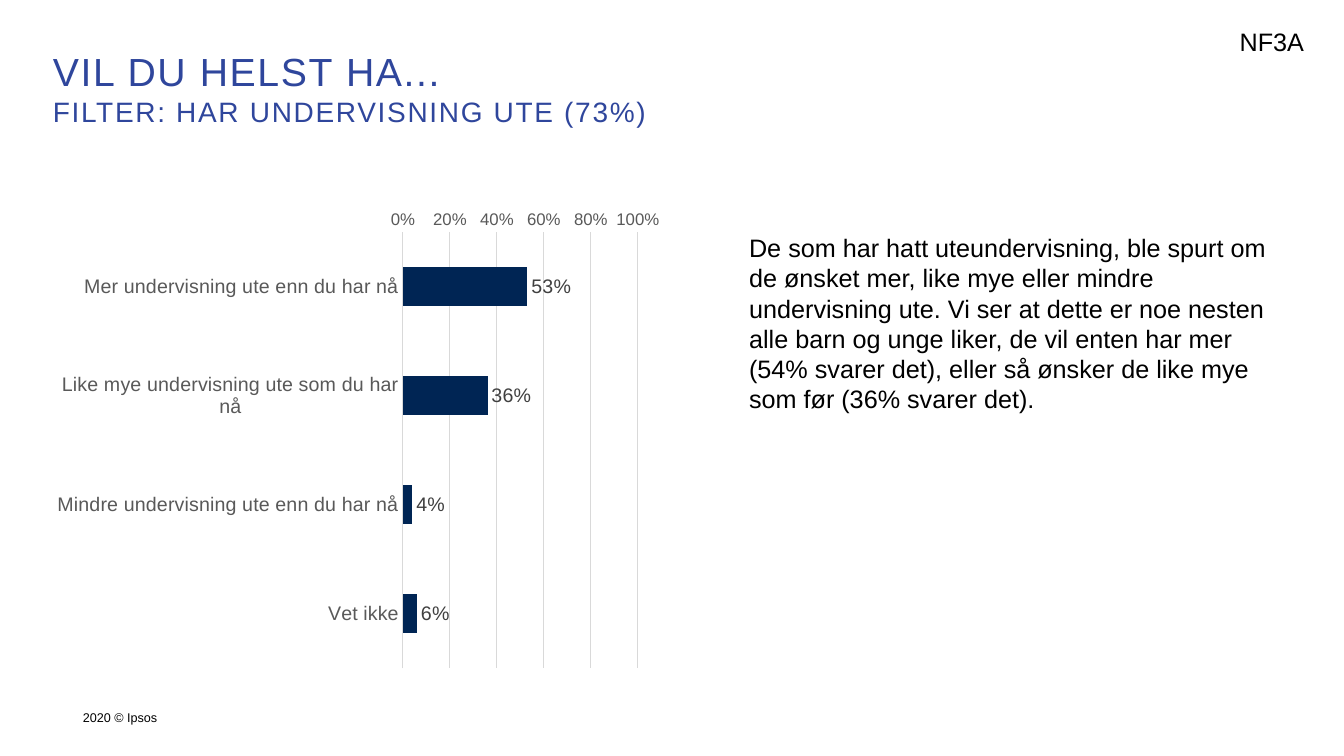
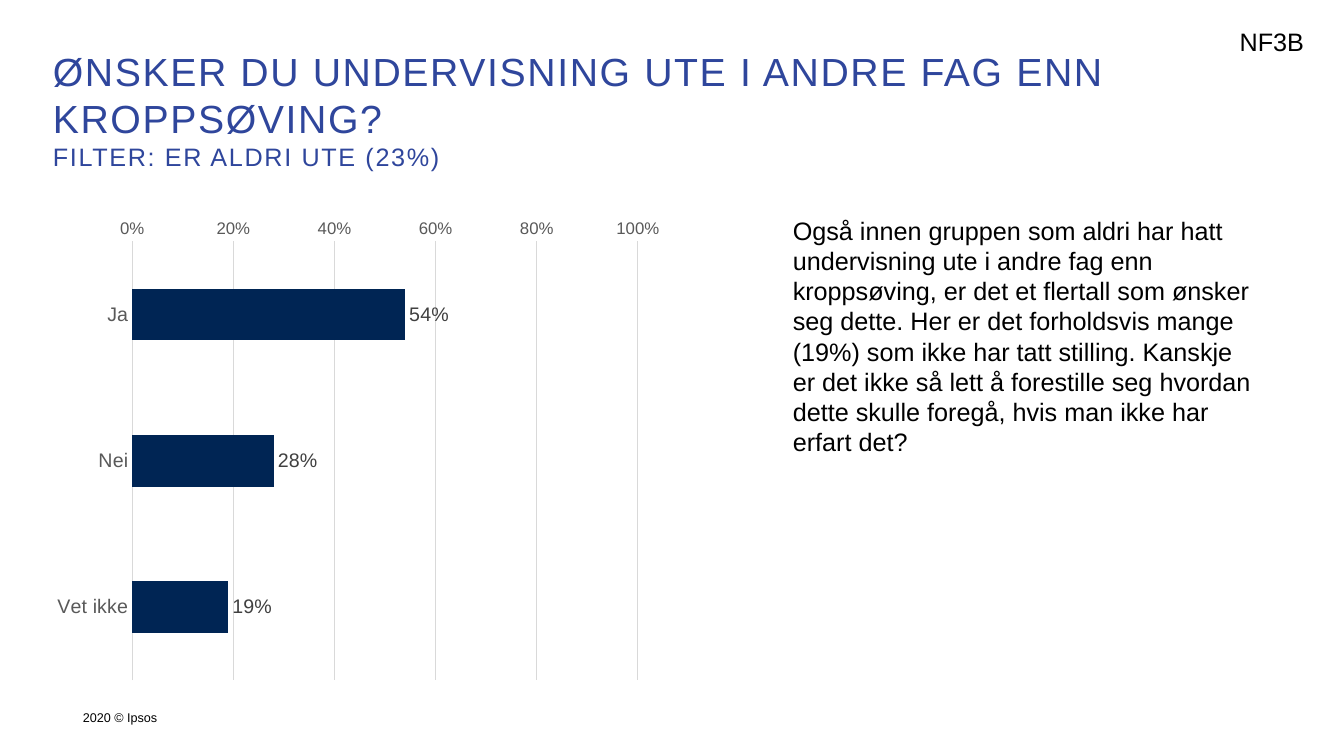
from lxml import etree
from pptx import Presentation
from pptx.chart.data import CategoryChartData
from pptx.dml.color import RGBColor
from pptx.enum.chart import XL_CHART_TYPE, XL_LABEL_POSITION, XL_TICK_MARK
from pptx.enum.text import MSO_ANCHOR, MSO_AUTO_SIZE, PP_ALIGN
from pptx.util import Inches, Pt

BAR = XL_CHART_TYPE.BAR_CLUSTERED
OUTSIDE_END = XL_LABEL_POSITION.OUTSIDE_END
NO_TICK = XL_TICK_MARK.NONE
TOP, MIDDLE = MSO_ANCHOR.TOP, MSO_ANCHOR.MIDDLE
GROW = MSO_AUTO_SIZE.SHAPE_TO_FIT_TEXT
NO_FIT = MSO_AUTO_SIZE.NONE
LEFT = PP_ALIGN.LEFT

FONT = "Arial"
COLORS = {
    "title": "2F469C",
    "text": "000000",
    "bar": "002554",
    "axis": "595959",
    "label": "404040",
    "grid": "D9D9D9",
}

# Grid: boxes are (column, row, columns wide, rows high)
SLIDE_WIDTH, SLIDE_HEIGHT = Inches(13.333), Inches(7.5)
COLUMNS, ROWS = 120, 90
FOOTER_BOX = (7.4, 83, 103, 4.8)
CODE_BOX = (109.8, 2.6, 7.9, 4.8)

SLIDES = [
    {
        "code": "NF3A",
        "title": "VIL DU HELST HA...",
        "filter": "FILTER: HAR UNDERVISNING UTE (73%)",
        "filter_size": 20,
        "title_box": (4, 5, 112, 10),
        "chart_box": (4, 23.9, 56, 56.8),
        "answers": {
            "Mer undervisning ute enn du har nå": 0.53,
            "Like mye undervisning ute som du har nå": 0.36,
            "Mindre undervisning ute enn du har nå": 0.04,
            "Vet ikke": 0.06,
        },
        "comment_box": (66, 27.1, 48.7, 23),
        "comment": "De som har hatt uteundervisning, ble spurt om de ønsket mer, "
                   "like mye eller mindre undervisning ute. Vi ser at dette er noe "
                   "nesten alle barn og unge liker, de vil enten har mer (54% svarer "
                   "det), eller så ønsker de like mye som før (36% svarer det).",
    },
    {
        "code": "NF3B",
        "title": "ØNSKER DU UNDERVISNING UTE I ANDRE FAG ENN KROPPSØVING?",
        "filter": "FILTER: ER ALDRI UTE (23%)",
        "filter_size": 18,
        "title_box": (4, 5, 100.8, 14.6),
        "chart_box": (4, 25, 56, 57.1),
        "answers": {"Ja": 0.54, "Nei": 0.28, "Vet ikke": 0.19},
        "comment_box": (69.9, 25, 43.3, 30.2),
        "comment": "Også innen gruppen som aldri har hatt undervisning ute i andre "
                   "fag enn kroppsøving, er det et flertall som ønsker seg dette. "
                   "Her er det forholdsvis mange (19%) som ikke har tatt stilling. "
                   "Kanskje er det ikke så lett å forestille seg hvordan dette skulle "
                   "foregå, hvis man ikke har erfart det?",
    },
]


def place(box):
    """Turn a grid box into left, top, width and height."""
    column, row, wide, high = box
    return (round(SLIDE_WIDTH * column / COLUMNS), round(SLIDE_HEIGHT * row / ROWS),
            round(SLIDE_WIDTH * wide / COLUMNS), round(SLIDE_HEIGHT * high / ROWS))


def style_font(font, size, color):
    font.name = FONT
    font.size = Pt(size)
    font.bold = False
    font.color.rgb = RGBColor.from_string(COLORS[color])


def add_run(paragraph, text, size, color):
    run = paragraph.add_run()
    run.text = text
    style_font(run.font, size, color)
    return run


def add_title(slide, box, title, filter_text, filter_size):
    shape = slide.shapes.title
    shape.left, shape.top, shape.width, shape.height = place(box)
    frame = shape.text_frame
    frame.word_wrap = True
    frame.auto_size = GROW
    frame.vertical_anchor = TOP
    frame.margin_left = frame.margin_right = Inches(0.08)
    frame.margin_top = frame.margin_bottom = Inches(0.05)
    paragraph = frame.paragraphs[0]
    paragraph.alignment = LEFT
    paragraph.line_spacing = 1.0
    heading = add_run(paragraph, title, 28, "title")
    paragraph.add_line_break()
    subheading = add_run(paragraph, filter_text, filter_size, "title")
    for run in (heading, subheading):
        run.font._element.set("spc", "120")


def add_text(slide, box, text, size, anchor=TOP, side_margin=0.1, fit=GROW):
    frame = slide.shapes.add_textbox(*place(box)).text_frame
    frame.word_wrap = True
    frame.auto_size = fit
    frame.vertical_anchor = anchor
    frame.margin_left = frame.margin_right = Inches(side_margin)
    add_run(frame.paragraphs[0], text, size, "text")


def style_line(line, color):
    line.color.rgb = RGBColor.from_string(COLORS[color])
    line.width = Pt(0.75)


def add_answer_chart(slide, box, answers):
    data = CategoryChartData(number_format="0%")
    data.categories = list(answers)
    data.add_series("Series 1", list(answers.values()))
    chart = slide.shapes.add_chart(BAR, *place(box), data).chart
    chart.has_title = False
    chart.has_legend = False
    style_font(chart.font, 10, "text")

    # Axes
    category_axis, value_axis = chart.category_axis, chart.value_axis
    for axis, size in ((category_axis, 14), (value_axis, 12)):
        axis.major_tick_mark = axis.minor_tick_mark = NO_TICK
        style_font(axis.tick_labels.font, size, "axis")
    category_axis.reverse_order = True
    category_axis.has_major_gridlines = False
    style_line(category_axis.format.line, "grid")
    value_axis.minimum_scale, value_axis.maximum_scale = 0, 1
    value_axis.major_unit = 0.2
    value_axis.format.line.fill.background()
    value_axis.has_major_gridlines = True
    style_line(value_axis.major_gridlines.format.line, "grid")
    value_axis.tick_labels.number_format = "0%"
    value_axis.tick_labels.number_format_is_linked = False

    # Bars and their labels
    plot = chart.plots[0]
    plot.gap_width = 182
    plot.vary_by_categories = False
    bars = plot.series[0]
    bars.invert_if_negative = False
    bars.format.fill.solid()
    bars.format.fill.fore_color.rgb = RGBColor.from_string(COLORS["bar"])
    labels = bars.data_labels
    labels.show_value = True
    labels.position = OUTSIDE_END
    labels.number_format = "0%"
    labels.number_format_is_linked = False
    style_font(labels.font, 14, "label")


def add_question_slide(presentation, content):
    slide = presentation.slides.add_slide(presentation.slide_layouts[5])
    add_text(slide, FOOTER_BOX, "2020 © Ipsos", 9, MIDDLE, 0, NO_FIT)
    add_title(slide, content["title_box"], content["title"],
              content["filter"], content["filter_size"])
    add_answer_chart(slide, content["chart_box"], content["answers"])
    add_text(slide, content["comment_box"], content["comment"], 18)
    add_text(slide, CODE_BOX, content["code"], 18)


def main():
    presentation = Presentation()
    presentation.slide_width, presentation.slide_height = SLIDE_WIDTH, SLIDE_HEIGHT
    for content in SLIDES:
        add_question_slide(presentation, content)
    presentation.save("out.pptx")


if __name__ == "__main__":
    main()
